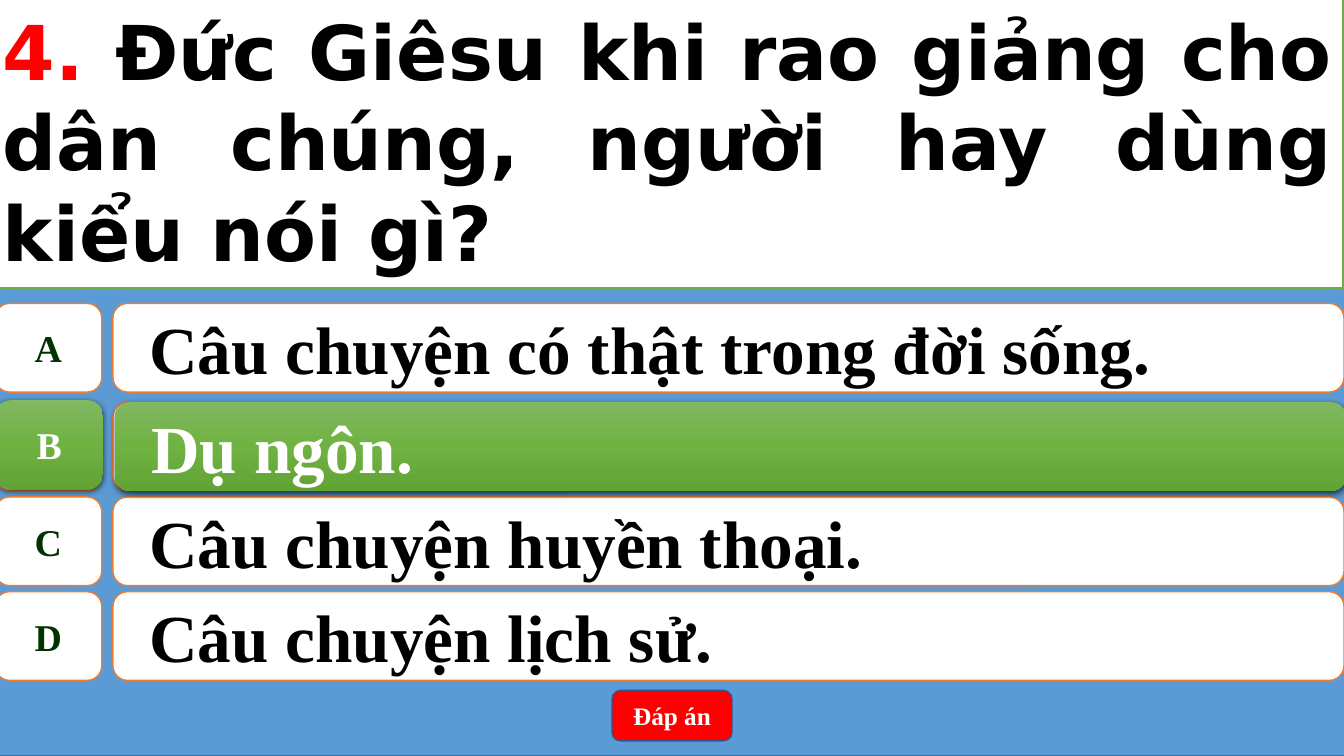
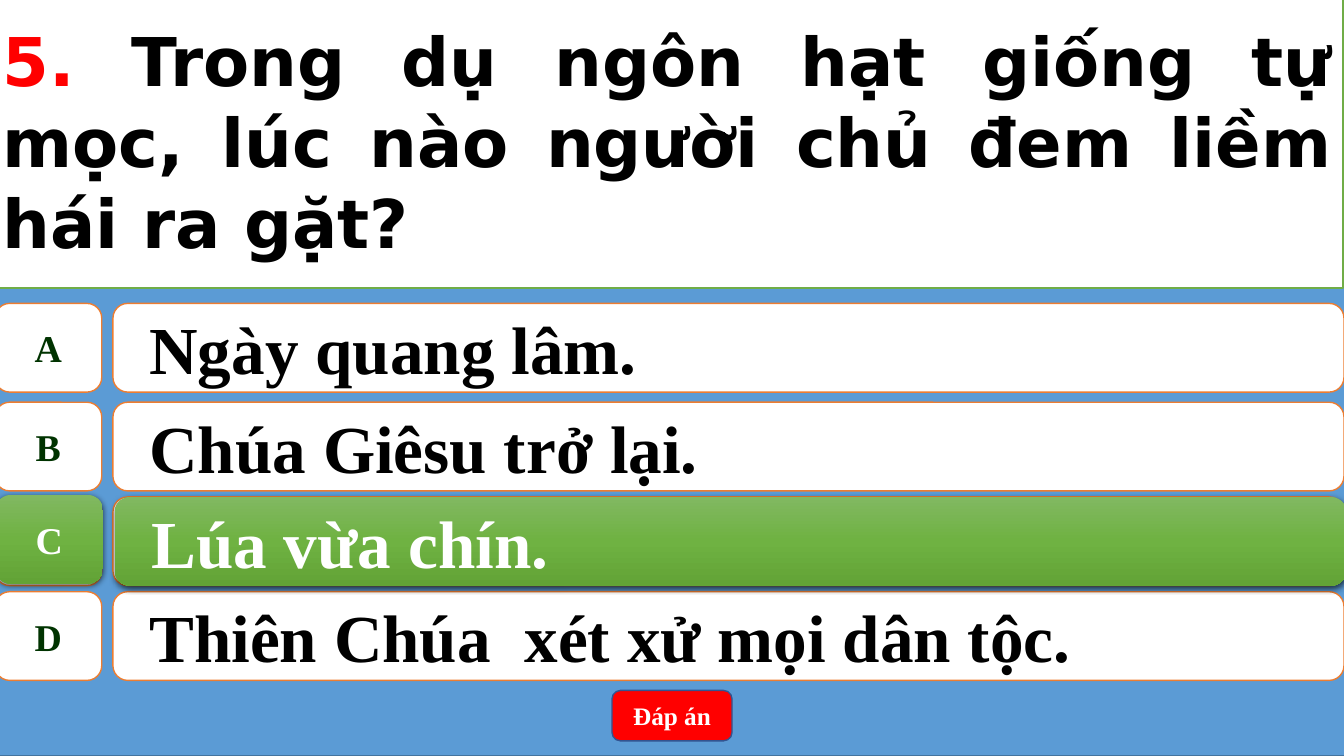
from lxml import etree
from pptx import Presentation
from pptx.dml.color import RGBColor
from pptx.enum.shapes import MSO_SHAPE as Shape
from pptx.enum.text import MSO_ANCHOR as Anchor, PP_ALIGN as Align
from pptx.oxml import parse_xml
from pptx.oxml.ns import nsdecls, qn
from pptx.util import Inches, Pt

SERIF, SANS = "Times New Roman", "DejaVu Sans"
BLUE, BLUE_EDGE = "5B9BD5", "43739E"
WHITE, BLACK, RED = "FFFFFF", "000000", "FF0000"
ORANGE, GREEN, DARK_GREEN, NAVY = "ED7D31", "70AD47", "003300", "325491"
GREEN_STOPS = [(0, "81B861"), (50, "6FB242"), (100, "62A336")]

ROW_TOPS = {"A": 3.01, "B": 3.99, "C": 4.93, "D": 5.87}
ROW_HEIGHT = 0.88

QUESTIONS = [
    {"number": "4. ", "size": 54, "correct": "B",
     "text": "Đức Giêsu khi rao giảng cho dân chúng, người hay dùng kiểu nói gì?",
     "answers": ["Câu chuyện có thật trong đời sống.", "Dụ ngôn.",
                 "Câu chuyện huyền thoại.", "Câu chuyện lịch sử."]},
    {"number": "5. ", "size": 48, "correct": "C",
     "text": "Trong dụ ngôn hạt giống tự mọc, lúc nào người chủ đem liềm hái ra gặt?",
     "answers": ["Ngày quang lâm.", "Chúa Giêsu trở lại.",
                 "Lúa vừa chín.", "Thiên Chúa  xét xử mọi dân tộc."]},
]


def rgb(color):
    return RGBColor.from_string(color)


def highlight(box):
    """Give the box a vertical green gradient and a soft shadow, without a line."""
    box.line.fill.background()
    box.fill.gradient()
    box.fill.gradient_angle = 270
    properties = box._element.spPr
    stops = properties.find(qn("a:gradFill")).find(qn("a:gsLst"))
    for stop in list(stops):
        stops.remove(stop)
    for percent, color in GREEN_STOPS:
        stop = etree.SubElement(stops, qn("a:gs"), pos=str(percent * 1000))
        etree.SubElement(stop, qn("a:srgbClr"), val=color)
    properties.remove(properties.find(qn("a:effectLst")))
    properties.append(parse_xml(
        f'<a:effectLst {nsdecls("a")}>'
        f'<a:outerShdw blurRad="{Pt(4.5)}" dist="{Pt(1.5)}" dir="5400000" '
        'algn="ctr" rotWithShape="0"><a:srgbClr val="000000">'
        '<a:alpha val="63000"/></a:srgbClr></a:outerShdw></a:effectLst>'))


class Quiz:
    def __init__(self):
        self.deck = Presentation()
        self.deck.slide_width = Inches(13.33)
        self.deck.slide_height = Inches(7.5)
        self.page = None

    def new_page(self):
        self.page = self.deck.slides.add_slide(self.deck.slide_layouts[6])
        self.box(Shape.RECTANGLE, -0.05, 0, 13.39, 7.5, BLUE, BLUE_EDGE)

    def box(self, kind, left, top, width, height, fill, line, shapes=None):
        shapes = shapes or self.page.shapes
        box = shapes.add_shape(kind, Inches(left), Inches(top),
                               Inches(width), Inches(height))
        box.shadow.inherit = False
        box.fill.solid()
        box.fill.fore_color.rgb = rgb(fill)
        box.line.color.rgb = rgb(line)
        box.line.width = Pt(1)
        return box

    def set_text(self, box, spans, size, font=SERIF, align=Align.CENTER, wrap=True):
        """Fill the box with one bold paragraph of (text, color) spans."""
        frame = box.text_frame
        frame.word_wrap = wrap
        frame.vertical_anchor = Anchor.MIDDLE
        para = frame.paragraphs[0]
        para.alignment = align
        para.font.name, para.font.size, para.font.bold = font, Pt(size), True
        for text, color in spans:
            span = para.add_run()
            span.text = text
            span.font.color.rgb = rgb(color)
        return para

    def answer(self, letter, text, correct=False):
        """Draw one answer row: the letter tile and the wide answer bar."""
        shapes = self.page.shapes.add_group_shape().shapes
        top = ROW_TOPS[letter]
        tile_left, tile_top, bar_left = -0.05, top, 1.12
        if correct:
            tile_left, tile_top, bar_left = -0.04, top - 0.02, 1.14
        tile = self.box(Shape.FLOWCHART_ALTERNATE_PROCESS, tile_left, tile_top,
                        1.06, ROW_HEIGHT, WHITE, ORANGE, shapes)
        bar = self.box(Shape.ROUNDED_RECTANGLE, bar_left, top,
                       12.21, ROW_HEIGHT, WHITE, ORANGE, shapes)
        if correct:
            highlight(tile)
            highlight(bar)
        self.set_text(tile, [(letter, WHITE if correct else DARK_GREEN)], 27,
                      wrap=False)
        para = self.set_text(bar, [(text, WHITE if correct else BLACK)], 48,
                             align=Align.LEFT)
        indents = para._p.get_or_add_pPr()
        indents.set("marL", str(Inches(0.5)))
        indents.set("indent", str(Inches(-0.28)))

    def button(self, text):
        box = self.box(Shape.ROUNDED_RECTANGLE, 6.07, 6.85, 1.19, 0.5, RED, NAVY)
        self.set_text(box, [(text, WHITE)], 18)

    def question(self, number, text, size):
        box = self.box(Shape.RECTANGLE, -0.07, -0.07, 13.39, 2.93, WHITE, GREEN)
        self.set_text(box, [(number, RED), (text, BLACK)], size, SANS, Align.JUSTIFY)


def main():
    quiz = Quiz()
    for item in QUESTIONS:
        quiz.new_page()
        answers = dict(zip(ROW_TOPS, item["answers"]))
        for letter, text in answers.items():
            quiz.answer(letter, text)
        quiz.button("Đáp án")
        quiz.answer(item["correct"], answers[item["correct"]], correct=True)
        quiz.question(item["number"], item["text"], item["size"])
    quiz.deck.save("out.pptx")


if __name__ == "__main__":
    main()
